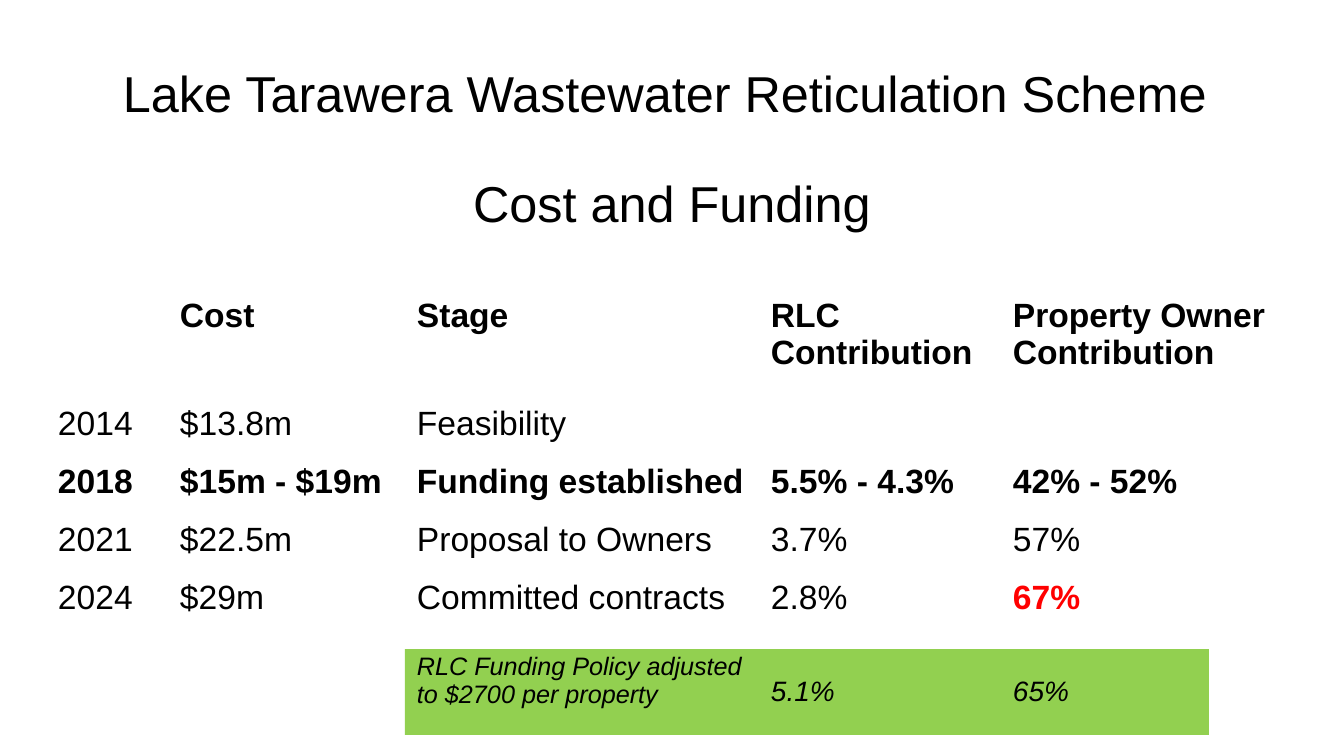
from pptx import Presentation
from pptx.dml.color import RGBColor
from pptx.enum.shapes import MSO_SHAPE as Shape
from pptx.enum.text import MSO_ANCHOR as Anchor, PP_ALIGN as Align
from pptx.util import Emu, Pt

BLACK = RGBColor(0x00, 0x00, 0x00)
RED = RGBColor(0xFF, 0x00, 0x00)
GREEN = RGBColor(0x92, 0xD0, 0x50)
PLAIN_TABLE = "{2D5ABB26-0587-4C30-8999-92F81FD0307C}"  # no style, no grid


def px(length):
    return Emu(round(length * 914400 / 100.8))


class SlideBuilder:
    font_name = "Arial"
    cell_inset = 7

    def __init__(self, slide):
        self.slide = slide

    def set_text(self, paragraph, text, size, align, bold=False, italic=False,
                 color=BLACK, gap=0, spacing=1.0):
        paragraph.text = text
        paragraph.alignment = align
        paragraph.space_before = Pt(gap)
        paragraph.line_spacing = spacing
        font = paragraph.font
        font.name, font.size = self.font_name, Pt(size)
        font.bold, font.italic = bold, italic
        font.color.rgb = color

    def title(self, box, lines, size, gap):
        frame = self.slide.shapes.add_textbox(*map(px, box)).text_frame
        frame.word_wrap = True
        frame.vertical_anchor = Anchor.MIDDLE
        for index, line in enumerate(lines):
            paragraph = frame.add_paragraph() if index else frame.paragraphs[0]
            self.set_text(paragraph, line, size, Align.CENTER,
                          gap=gap if index else 0, spacing=0.9)

    def band(self, box, color):
        band = self.slide.shapes.add_shape(Shape.RECTANGLE, *map(px, box))
        band.shadow.inherit = False
        band.fill.solid()
        band.fill.fore_color.rgb = color
        band.line.fill.background()

    def table(self, left, top, widths, heights):
        frame = self.slide.shapes.add_table(
            len(heights), len(widths), px(left), px(top),
            px(sum(widths)), px(sum(heights)))
        table = frame.table
        table.first_row = table.horz_banding = False
        for style_id in frame.element.xpath(".//a:tableStyleId"):
            style_id.text = PLAIN_TABLE
        for column, width in zip(table.columns, widths):
            column.width = px(width)
        for row, height in zip(table.rows, heights):
            row.height = px(height)
        for cell in table.iter_cells():
            cell.fill.background()
            cell.margin_left = cell.margin_right = px(self.cell_inset)
            cell.margin_top = cell.margin_bottom = 0
        return table

    def cell(self, cell, text, align, bold=False, color=BLACK):
        self.set_text(cell.text_frame.paragraphs[0], text, 24, align, bold, color=color)

    def note(self, cell, lines, size, gap):
        for index, line in enumerate(lines):
            self.set_text(cell.text_frame.add_paragraph(), line, size, Align.JUSTIFY,
                          italic=True, gap=0 if index else gap)


HEADINGS = ("", "Cost", "Stage", "RLC Contribution", "Property Owner Contribution")
STAGES = (
    ("2014", "$13.8m", "Feasibility", "", ""),
    ("2018", "$15m - $19m", "Funding established", "5.5% - 4.3%", "42% - 52%"),
    ("2021", "$22.5m", "Proposal to Owners", "3.7%", "57%"),
    ("2024", "$29m", "Committed contracts", "2.8%", "67%"),
)
BOLD_YEAR = "2018"
ALARMING_SHARE = "67%"
# Column, lines, size and gap of each policy note in the last row
POLICY_NOTES = (
    (2, ("RLC Funding Policy adjusted", "to $2700 per property"), 18, 26),
    (3, ("5.1%",), 20, 43),
    (4, ("65%",), 20, 43),
)


def main():
    deck = Presentation()
    deck.slide_width, deck.slide_height = px(1344), px(756)
    builder = SlideBuilder(deck.slides.add_slide(deck.slide_layouts[6]))

    # Title
    builder.title((76, 38, 1192, 226),
                  ("Lake Tarawera Wastewater Reticulation Scheme ", "Cost and Funding"),
                  size=36, gap=40)

    # Green band behind the policy notes
    builder.band((405, 649, 804, 86), GREEN)

    # Cost and funding by stage
    funding = builder.table(51, 297, (122, 237, 354, 242, 280), (108, 58, 58, 58, 142))
    for row, values in enumerate((HEADINGS, *STAGES)):
        heading = row == 0
        for column, value in enumerate(values):
            if value:
                alarming = value == ALARMING_SHARE
                builder.cell(funding.cell(row, column), value,
                             Align.LEFT if heading else Align.JUSTIFY,
                             bold=heading or alarming or values[0] == BOLD_YEAR,
                             color=RED if alarming else BLACK)

    # Policy notes
    for column, lines, size, gap in POLICY_NOTES:
        builder.note(funding.cell(len(STAGES), column), lines, size, gap)

    deck.save("out.pptx")


if __name__ == "__main__":
    main()
